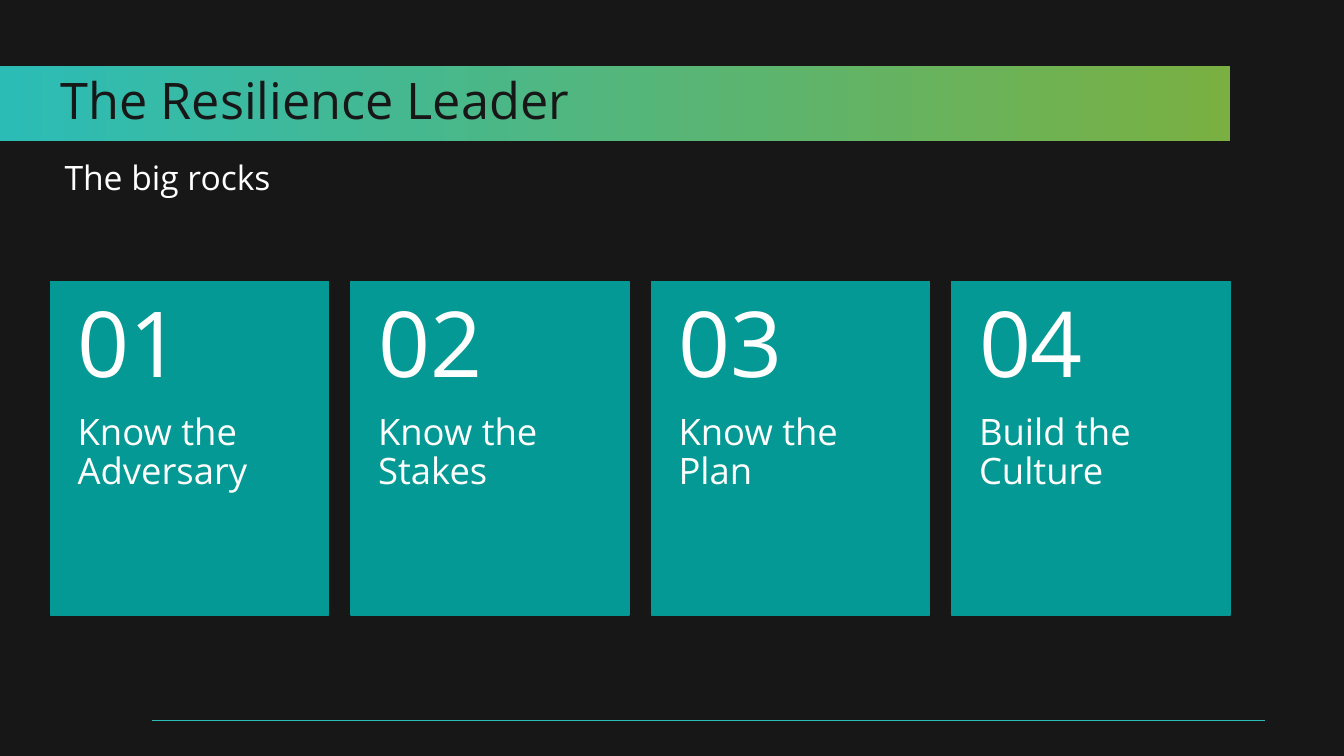
from lxml import etree
from pptx import Presentation
from pptx.dml.color import RGBColor
from pptx.enum.shapes import MSO_CONNECTOR, MSO_SHAPE
from pptx.enum.text import MSO_ANCHOR, MSO_AUTO_SIZE, PP_ALIGN
from pptx.oxml.ns import qn
from pptx.util import Inches, Pt

RECTANGLE = MSO_SHAPE.RECTANGLE
STRAIGHT = MSO_CONNECTOR.STRAIGHT
TOP, MIDDLE = MSO_ANCHOR.TOP, MSO_ANCHOR.MIDDLE
LEFT = PP_ALIGN.LEFT
NO_AUTOFIT = MSO_AUTO_SIZE.NONE

FONT = "Open Sans"
COLORS = {
    "dark": "171717",
    "white": "FFFFFF",
    "turquoise": "2CBCB6",
    "green": "7AB042",
    "teal": "049995",
}
ROCKS = ["Know the Adversary", "Know the Stakes", "Know the Plan", "Build the Culture"]
CARD_LEFT, CARD_TOP, CARD_WIDTH, CARD_HEIGHT = 0.5, 2.79, 2.76, 3.31
CARD_STEP = 2.98
NUMBER_HEIGHT = 1.32


def color(name):
    return RGBColor.from_string(COLORS[name])


def place(shape, left, top, width, height):
    shape.left, shape.top = Inches(left), Inches(top)
    shape.width, shape.height = Inches(width), Inches(height)


def write(shape, text, size, color_name, insets, anchor=TOP, before=0, after=0):
    frame = shape.text_frame
    frame.word_wrap = True
    frame.auto_size = NO_AUTOFIT
    frame.vertical_anchor = anchor
    frame.margin_left, frame.margin_top, frame.margin_right, frame.margin_bottom = map(Inches, insets)
    paragraph = frame.paragraphs[0]
    paragraph.text = text
    paragraph.alignment = LEFT
    paragraph.line_spacing = 0.9
    paragraph.space_before = Pt(before)
    paragraph.space_after = Pt(after)
    paragraph.font.name = FONT
    paragraph.font.size = Pt(size)
    paragraph.font.bold = False
    paragraph.font.color.rgb = color(color_name)


def add_footer_line(slide):
    line = slide.shapes.add_connector(STRAIGHT, Inches(1.51), Inches(7.15), Inches(12.55), Inches(7.15))
    line.line.color.rgb = color("turquoise")
    line.line.width = Pt(1)
    etree.SubElement(line._element.spPr, qn("a:effectLst"))


def fill_title(slide):
    title = slide.shapes.title
    place(title, 0, 0.65, 12.2, 0.75)
    title.fill.gradient()
    title.fill.gradient_angle = 0
    for stop, name in zip(title.fill.gradient_stops, ("turquoise", "green")):
        stop.color.rgb = color(name)
    write(title, "The Resilience Leader", 36, "dark", (0.6, 0.1, 0.2, 0.1), MIDDLE)


def fill_subtitle(slide):
    subtitle = slide.placeholders[1]
    place(subtitle, 0, 1.55, 12.2, 0.42)
    write(subtitle, "The big rocks", 24, "white", (0.64, 0.05, 0.1, 0))


def add_card(slide, index, rock):
    left = CARD_LEFT + index * CARD_STEP
    group = slide.shapes.add_group_shape()
    card = group.shapes.add_shape(
        RECTANGLE, Inches(left), Inches(CARD_TOP), Inches(CARD_WIDTH), Inches(CARD_HEIGHT))
    card.shadow.inherit = False
    card.fill.solid()
    card.fill.fore_color.rgb = color("teal")
    card.line.color.rgb = color("teal")
    card.line.width = Pt(1)

    label = group.shapes.add_textbox(
        Inches(left), Inches(CARD_TOP + NUMBER_HEIGHT),
        Inches(CARD_WIDTH), Inches(CARD_HEIGHT - NUMBER_HEIGHT))
    write(label, rock, 26, "white", (0.27, 0, 0.27, 0.36))

    number = group.shapes.add_textbox(
        Inches(left), Inches(CARD_TOP), Inches(CARD_WIDTH), Inches(NUMBER_HEIGHT))
    write(number, f"{index + 1:02d}", 65, "white", (0.27, 0.18, 0.27, 0.18), MIDDLE)


def main():
    presentation = Presentation()
    presentation.slide_width = Inches(13.33)
    presentation.slide_height = Inches(7.5)
    slide = presentation.slides.add_slide(presentation.slide_layouts[0])
    slide.background.fill.solid()
    slide.background.fill.fore_color.rgb = color("dark")
    add_footer_line(slide)
    fill_title(slide)
    fill_subtitle(slide)
    for index, rock in enumerate(ROCKS):
        add_card(slide, index, rock)
    presentation.save("out.pptx")


if __name__ == "__main__":
    main()
